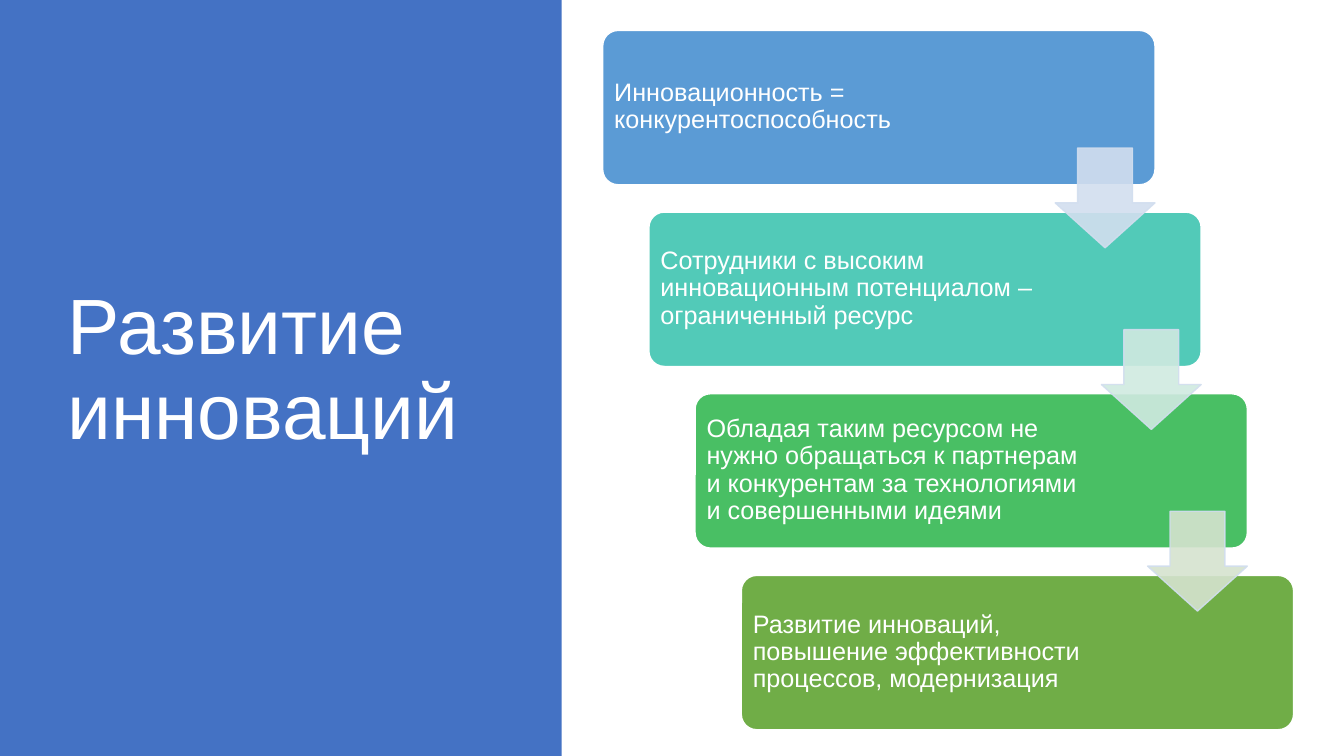
from lxml import etree
from pptx import Presentation
from pptx.dml.color import RGBColor
from pptx.enum.shapes import MSO_SHAPE
from pptx.enum.text import MSO_ANCHOR
from pptx.oxml.ns import qn
from pptx.util import Pt

RECT = MSO_SHAPE.RECTANGLE
ROUND = MSO_SHAPE.ROUNDED_RECTANGLE
ARROW = MSO_SHAPE.DOWN_ARROW
MIDDLE = MSO_ANCHOR.MIDDLE
PX = 9525  # EMU per px, 96 px to the inch

COLORS = {
    "panel": "4472C4", "white": "FFFFFF", "edge": "D2DEEF",
    "blue": "5B9BD5", "teal": "52CAB8", "green": "49BF64", "olive": "70AD47",
    "pale blue": "D2DEEF", "pale teal": "D0EAE1", "pale green": "D5E3CF",
}


def add_block(kind, left, top, width, height, fill, edge=None):
    block = slide.shapes.add_shape(kind, left * PX, top * PX, width * PX, height * PX)
    block.shadow.inherit = False
    block.fill.solid()
    block.fill.fore_color.rgb = RGBColor.from_string(COLORS[fill])
    if edge:
        block.line.color.rgb = RGBColor.from_string(COLORS[edge])
        block.line.width = Pt(1)
    else:
        block.line.fill.background()
    return block


def add_text(text, left, top, width, height, size, inset=None):
    box = slide.shapes.add_textbox(left * PX, top * PX, width * PX, height * PX)
    frame = box.text_frame
    frame.word_wrap = True
    frame.vertical_anchor = MIDDLE
    if inset:
        frame.margin_left = frame.margin_right = inset * PX
        frame.margin_top = frame.margin_bottom = inset * PX
    frame.text = text
    para = frame.paragraphs[0]
    para.line_spacing = 0.9
    font = para.runs[0].font
    font.name = "Arial"
    font.size = Pt(size)
    font.color.rgb = RGBColor.from_string(COLORS["white"])


prs = Presentation()
prs.slide_width = 1280 * PX
prs.slide_height = 720 * PX
slide = prs.slides.add_slide(prs.slide_layouts[6])

# Title panel
add_block(RECT, 0, 0, 535, 720, "panel")
add_text("Развитие инноваций", 55, 65, 399, 578, 56)

# Staircase of steps
LEFT, TOP = 574, 29
DX, DY = 44, 173
steps = [
    ("Инновационность = конкурентоспособность", "blue", 356),
    ("Сотрудники с высоким инновационным потенциалом – ограниченный ресурс",
     "teal", 378),
    ("Обладая таким ресурсом не нужно обращаться к партнерам и конкурентам "
     "за технологиями и совершенными идеями", "green", 379),
    ("Развитие инноваций, повышение эффективности процессов, модернизация",
     "olive", 378),
]
for i, (text, fill, width) in enumerate(steps):
    left, top = LEFT + i * DX, TOP + i * DY
    card = add_block(ROUND, left, top, 526, 147, fill, "white")
    card.adjustments[0] = 0.1
    add_text(text, left + 4, top + 4, width, 138, 18, 7)

# Translucent arrows between the steps
for i, fill in enumerate(["pale blue", "pale teal", "pale green"]):
    arrow = add_block(ARROW, LEFT + 431 + i * DX, TOP + 112 + i * DY, 95, 95,
                      fill, "edge")
    arrow.adjustments[0] = 0.55
    arrow.adjustments[1] = 0.45
    for color in arrow.element.spPr.iter(qn("a:srgbClr")):
        etree.SubElement(color, qn("a:alpha"), val="90000")

prs.save("out.pptx")
